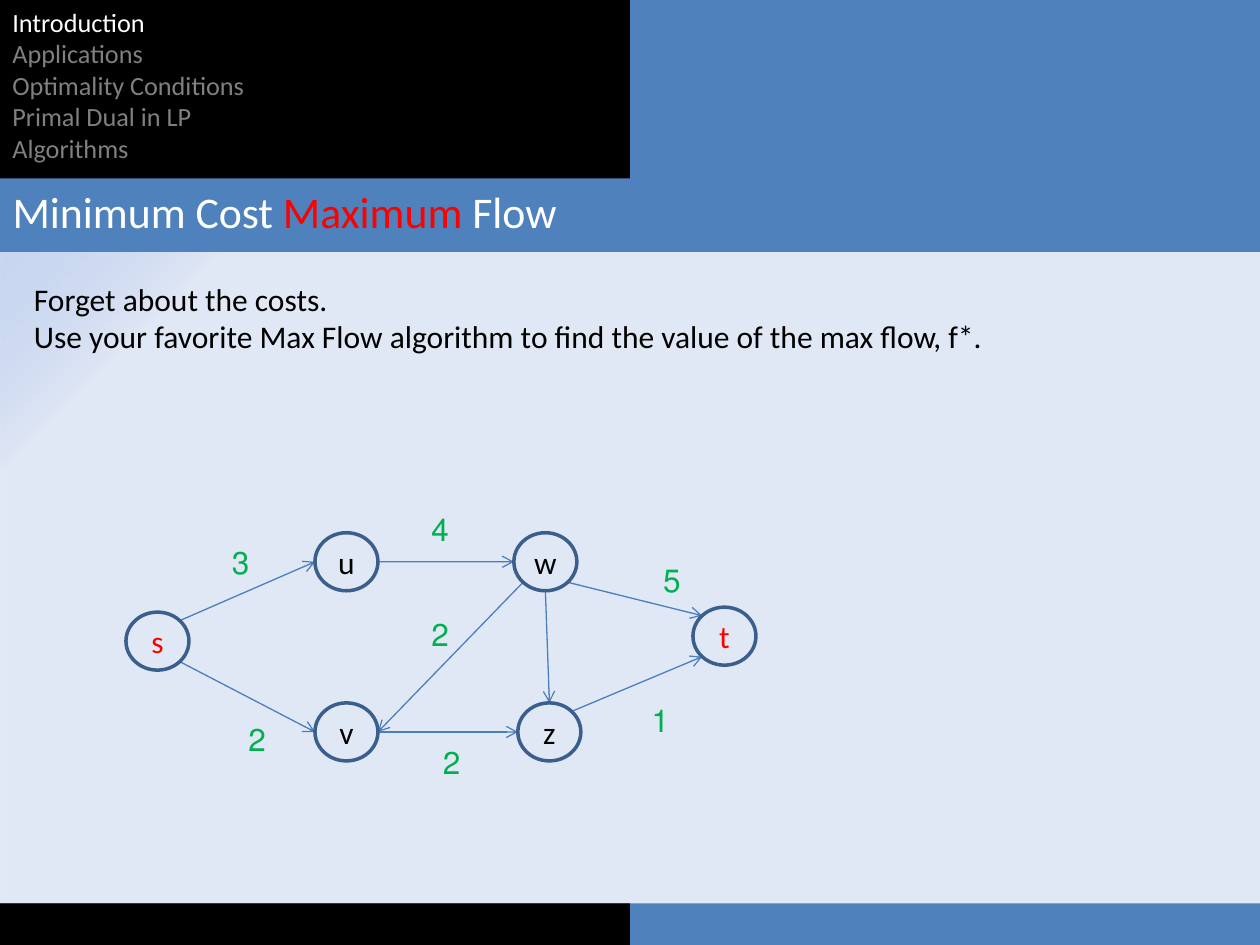
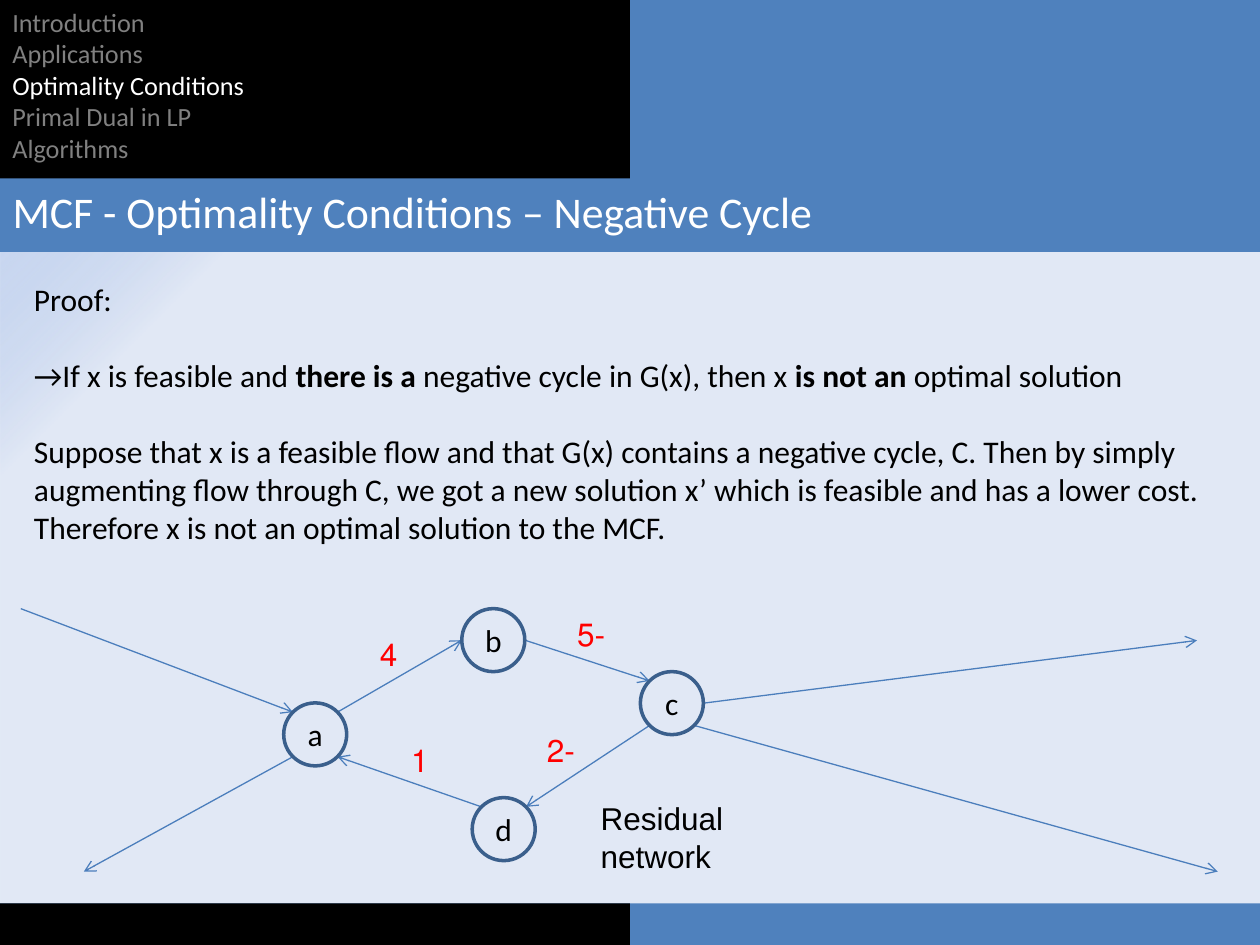
import math

import pptx
import pptx.dml.color
import pptx.enum.shapes
import pptx.enum.text
import pptx.oxml.ns
import pptx.oxml.xmlchemy
import pptx.util
from lxml import etree

Cm = pptx.util.Cm
Pt = pptx.util.Pt
Shape = pptx.enum.shapes.MSO_SHAPE
Align = pptx.enum.text.PP_ALIGN
Anchor = pptx.enum.text.MSO_ANCHOR
qn = pptx.oxml.ns.qn

WIDTH, HEIGHT = 25.4, 19.05
BLUE, BLACK, WHITE, GREY = "4F81BD", "000000", "FFFFFF", "808080"
RED, GREEN, NODE_LINE, ARROW_LINE = "FF0000", "00B050", "3A5F8C", "4B7EBC"

TITLE_FONT = {"name": "Calibri", "size": Pt(25)}
BODY_FONT = {"name": "Calibri", "size": Pt(18)}
MENU_FONT = {"name": "Calibri", "size": Pt(15)}
LABEL_FONT = {"name": "Arial", "size": Pt(18)}
TOP_LEFT = {"word_wrap": True, "vertical_anchor": Anchor.TOP,
            "auto_size": pptx.enum.text.MSO_AUTO_SIZE.NONE}
LINE_GAP = Pt(22)

TITLE_BOX = (0, 3.6, WIDTH, 1.48)
BODY_BOX = (0.43, 5.51, 24.5, 6.5)
MENU_BOX = (0, 0, WIDTH / 2, 3.6)
MENU = ["Introduction", "Applications", "Optimality Conditions",
        "Primal Dual in LP", "Algorithms"]

# Connection sites of an ellipse, as degrees clockwise from its right end
SITES = {"right": 0, "bottom right": 45, "bottom": 90, "bottom left": 135,
         "left": 180, "top left": 225, "top": 270, "top right": 315}


def colour(value):
    return pptx.dml.color.RGBColor.from_string(value)


def apply(target, values):
    for name, value in values.items():
        setattr(target, name, value)


def place(shape, box):
    apply(shape, dict(zip(("left", "top", "width", "height"), map(Cm, box))))


def write(para, text, font, fill, bold=None):
    span = para.add_run()
    span.text = text
    apply(span.font, font)
    span.font.bold = bold
    span.font.color.rgb = colour(fill)


def set_right_to_left(para):
    para._p.get_or_add_pPr().set("rtl", "1")


def add_paragraph(frame, first):
    return frame.paragraphs[0] if first else frame.add_paragraph()


def add_text_box(page, box):
    shape = page.shapes.add_textbox(*map(Cm, box))
    apply(shape.text_frame, TOP_LEFT)
    return shape.text_frame


def add_band(page, box, fill):
    band = page.shapes.add_shape(Shape.RECTANGLE, *map(Cm, box))
    band.shadow.inherit = False
    band.line.fill.background()
    if fill:
        band.fill.solid()
        band.fill.fore_color.rgb = colour(fill)
    return band


def add_backdrop(page):
    panel = add_band(page, (0, 3.6, WIDTH, 14.61), None)
    panel.fill.gradient()
    panel.fill.gradient_angle = 315
    for stop, position, value in zip(panel.fill.gradient_stops, (0.02, 0.15), ("9AB5E4", "E1E8F5")):
        stop.position = position
        stop.color.rgb = colour(value)
    first_stop = next(panel.element.iter(qn("a:gs")))
    etree.SubElement(first_stop[0], qn("a:alpha"), val="52000")

    add_band(page, (0, 0, WIDTH, 5.08), BLUE)
    add_band(page, (0, 18.21, WIDTH, 0.84), BLUE)
    add_band(page, MENU_BOX, BLACK)
    add_band(page, (0, 18.21, WIDTH / 2, 0.84), BLACK)


def add_menu(page, box, current):
    frame = add_text_box(page, box)
    for index, section in enumerate(MENU):
        para = add_paragraph(frame, index == 0)
        write(para, section, MENU_FONT, WHITE if section == current else GREY)


def fill_title(title, box, spans):
    """Write (text, colour) spans into the title."""
    place(title, box)
    apply(title.text_frame, TOP_LEFT)
    para = title.text_frame.paragraphs[0]
    para.alignment = Align.LEFT
    for text, fill in spans:
        write(para, text, TITLE_FONT, fill)


def fill_body(body, box, paragraphs):
    """Write (gap before, texts) paragraphs; every second text is bold."""
    place(body, box)
    apply(body.text_frame, TOP_LEFT)
    for index, (gap, texts) in enumerate(paragraphs):
        para = add_paragraph(body.text_frame, index == 0)
        apply(para, {"space_before": gap, "alignment": Align.LEFT})
        properties = para._p.get_or_add_pPr()
        apply_indent = {"marL": "0", "indent": "0"}
        for name, value in apply_indent.items():
            properties.set(name, value)
        etree.SubElement(properties, qn("a:buNone"))
        for order, text in enumerate(texts):
            write(para, text, BODY_FONT, BLACK, order % 2 == 1)


def add_page(deck, section, title, paragraphs):
    page = deck.slides.add_slide(deck.slide_layouts[1])
    add_backdrop(page)
    for holder in list(page.placeholders):
        page.shapes._spTree.append(holder.element)
    fill_title(page.shapes.title, TITLE_BOX, title)
    fill_body(page.placeholders[1], BODY_BOX, paragraphs)
    add_menu(page, MENU_BOX, section)
    return page


def add_node(page, box, name, fill):
    node = page.shapes.add_shape(Shape.OVAL, *map(Cm, box))
    node.shadow.inherit = False
    node.fill.background()
    node.line.color.rgb = colour(NODE_LINE)
    node.line.width = Pt(2)
    apply(node.text_frame, {"vertical_anchor": Anchor.MIDDLE, "word_wrap": False})
    para = node.text_frame.paragraphs[0]
    para.alignment = Align.CENTER
    set_right_to_left(para)
    write(para, name, BODY_FONT, fill)


def add_arrow(page, start, end):
    arrow = page.shapes.add_connector(pptx.enum.shapes.MSO_CONNECTOR.STRAIGHT,
                                      *map(Cm, start + end))
    arrow.line.color.rgb = colour(ARROW_LINE)
    arrow.line.width = Pt(0.75)
    etree.SubElement(arrow.line._get_or_add_ln(), qn("a:tailEnd"), type="arrow")
    etree.SubElement(arrow.element.spPr, qn("a:effectLst"))


def add_network(page, box, node_size, nodes, edges, weights, weight_fill, ends=()):
    """Draw a graph; an edge end is a (node, site) pair or a free (x, y) point."""
    left, top = box
    width, height = node_size

    def locate(end):
        if end[0] not in nodes:
            return left + end[0], top + end[1]
        x, y = nodes[end[0]]
        angle = math.radians(SITES[end[1]])
        return (left + x + width / 2 * (1 + math.cos(angle)),
                top + y + height / 2 * (1 + math.sin(angle)))

    for start, end in edges:
        add_arrow(page, locate(start), locate(end))
    for name, (x, y) in nodes.items():
        add_node(page, (left + x, top + y, width, height), name, RED if name in ends else BLACK)
    for text, right, y in weights:
        frame = add_text_box(page, (left + right - 1.5, top + y, 1.5, 1.02))
        para = frame.paragraphs[0]
        para.alignment = Align.RIGHT
        set_right_to_left(para)
        write(para, text, LABEL_FONT, weight_fill)


def add_maximum_flow(deck):
    page = add_page(
        deck, "Introduction",
        [("Minimum Cost ", WHITE), ("Maximum ", RED), ("Flow", WHITE)],
        [(0, ["Forget about the costs."]),
         (0, ["Use your favorite Max Flow algorithm to find the value of the max flow, f*."])])
    add_network(
        page, (2.54, 10.16), (1.27, 1.17),
        nodes={"s": (0, 2.18), "u": (3.81, 0.58), "v": (3.81, 4.01),
               "w": (7.82, 0.58), "z": (7.9, 4.01), "t": (11.43, 2.08)},
        edges=[(("s", "top right"), ("u", "left")),
               (("s", "bottom right"), ("v", "left")),
               (("u", "right"), ("w", "left")),
               (("w", "bottom left"), ("v", "right")),
               (("w", "bottom right"), ("t", "top left")),
               (("z", "top right"), ("t", "bottom left")),
               (("w", "bottom"), ("z", "top")),
               (("v", "right"), ("z", "left"))],
        weights=[("3", 2.74, 0.66), ("2", 3.07, 4.24), ("4", 6.76, 0), ("2", 6.76, 2.11),
                 ("5", 11.43, 1.02), ("1", 11.2, 3.84), ("2", 6.99, 4.7)],
        weight_fill=GREEN, ends="st")


def add_negative_cycle(deck):
    page = add_page(
        deck, "Optimality Conditions",
        [("MCF - Optimality Conditions – Negative Cycle", WHITE)],
        [(0, ["Proof:"]),
         (LINE_GAP, ["→If x is feasible and ", "there is a",
                     " negative cycle in G(x), then x ", "is not an", " optimal solution"]),
         (LINE_GAP, ["Suppose that x is a feasible flow and that G(x) contains a negative "
                     "cycle, C. Then by simply augmenting flow through C, we got a new "
                     "solution x’ which is feasible and has a lower cost."]),
         (0, ["Therefore x is not an optimal solution to the MCF."])])
    left, top = box = (0.42, 12.27)
    add_network(
        page, box, (1.27, 1.27),
        nodes={"a": (5.3, 1.9), "b": (8.89, 0), "c": (12.49, 1.27), "d": (9.1, 3.81)},
        edges=[(("a", "top right"), ("b", "left")),
               ((0, 0), ("a", "top left")),
               (("a", "bottom left"), (1.27, 5.3)),
               (("c", "right"), (23.71, 0.64)),
               (("b", "right"), ("c", "top left")),
               (("c", "bottom left"), ("d", "top right")),
               (("c", "bottom right"), (24.13, 5.3)),
               (("d", "top left"), ("a", "bottom right"))],
        weights=[("4", 7.84, 0.4), ("-5", 12.03, 0), ("1", 8.47, 2.54), ("-2", 11.42, 2.34)],
        weight_fill=RED)
    caption = add_text_box(page, (left + 11.44, top + 3.71, 4.45, 1.8))
    write(caption.paragraphs[0], "Residual network", LABEL_FONT, BLACK)


def main():
    deck = pptx.Presentation()
    apply(deck, {"slide_width": Cm(WIDTH), "slide_height": Cm(HEIGHT)})
    add_maximum_flow(deck)
    add_negative_cycle(deck)
    deck.save("out.pptx")


if __name__ == "__main__":
    main()
